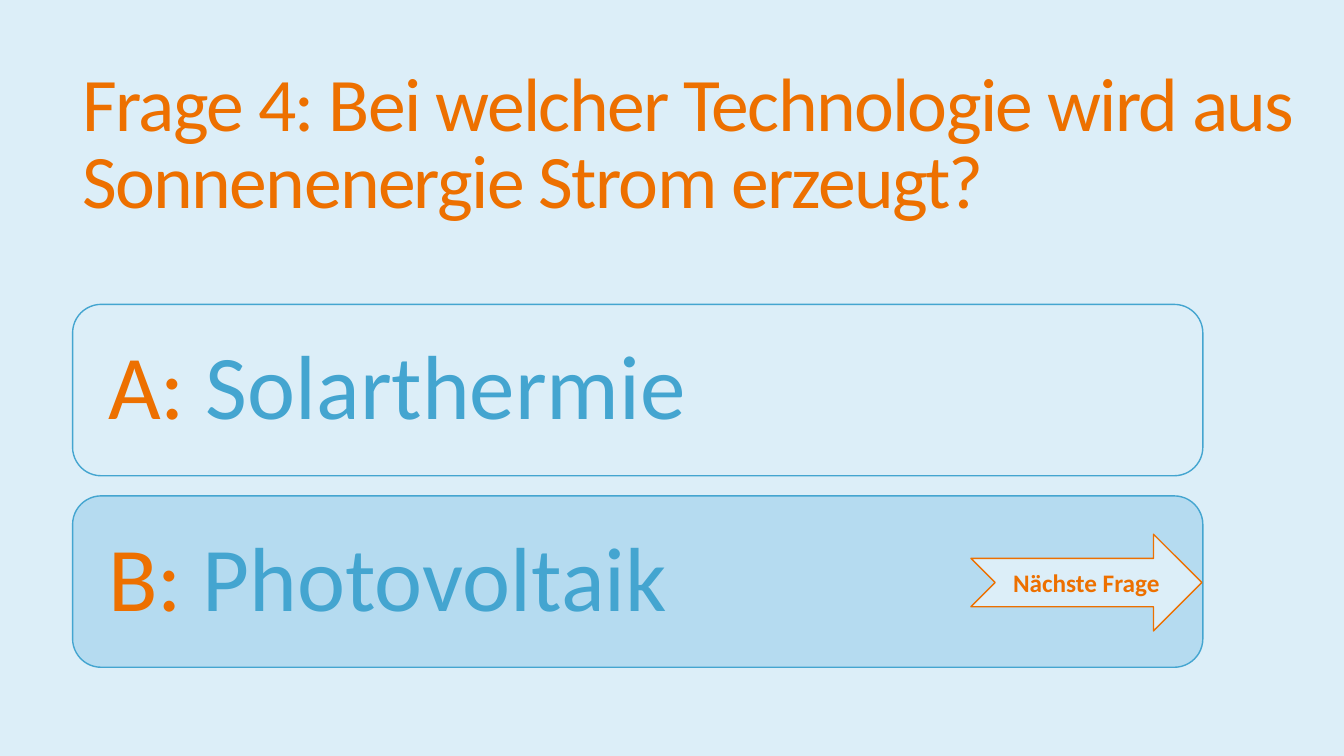
"""Build the quiz slide for question 4 about solar technologies."""
from typing import NamedTuple

from pptx import Presentation
from pptx.dml.color import RGBColor
from pptx.enum.shapes import MSO_SHAPE
from pptx.enum.text import MSO_ANCHOR, MSO_AUTO_SIZE, PP_ALIGN
from pptx.shapes.autoshape import Shape
from pptx.slide import Slide
from pptx.util import Inches, Pt

ORANGE = RGBColor(0xED, 0x70, 0x00)
BLUE = RGBColor(0x44, 0xA5, 0xD0)
PALE = RGBColor(0xDC, 0xEE, 0xF8)
HIGHLIGHT = RGBColor(0xB5, 0xDB, 0xF0)
LEFT, ANSWER_TOP, ANSWER_PITCH = 0.72, 3.02, 1.9


class Answer(NamedTuple):
    letter: str
    text: str
    fill: RGBColor


class Run(NamedTuple):
    text: str
    color: RGBColor


ANSWERS = [
    Answer("A", "Solarthermie", PALE),
    Answer("B", "Photovoltaik", HIGHLIGHT),
]


def write(box: Shape, runs: list[Run], *, size: float, align: PP_ALIGN = PP_ALIGN.LEFT,
          bold: bool = False, line_spacing: float = 1.0, tracking: float = 0,
          inset: float | None = None) -> None:
    frame = box.text_frame
    frame.word_wrap = True
    frame.auto_size = MSO_AUTO_SIZE.NONE
    frame.vertical_anchor = MSO_ANCHOR.MIDDLE
    if inset is not None:
        frame.margin_left = frame.margin_right = Inches(inset)
        frame.margin_top = frame.margin_bottom = Inches(inset)
    para = frame.paragraphs[0]
    para.alignment = align
    para.line_spacing = line_spacing
    for run in runs:
        span = para.add_run()
        span.text = run.text
        span.font.name = "Calibri"
        span.font.size = Pt(size)
        span.font.bold = bold
        span.font.color.rgb = run.color
        if tracking:
            span.font._element.set("spc", str(round(tracking * 100)))


def add_panel(page: Slide, kind: MSO_SHAPE, left: float, top: float, width: float,
              height: float, fill: RGBColor, line: RGBColor) -> Shape:
    box = page.shapes.add_shape(kind, Inches(left), Inches(top), Inches(width), Inches(height))
    box.shadow.inherit = False
    box.fill.solid()
    box.fill.fore_color.rgb = fill
    box.line.color.rgb = line
    box.line.width = Pt(1)
    return box


def add_title(page: Slide, text: str) -> None:
    title = page.shapes.title
    title.left, title.top = Inches(LEFT), Inches(0.55)
    title.width, title.height = Inches(12.45), Inches(1.81)
    write(title, [Run(text, ORANGE)], size=54, line_spacing=0.85, tracking=-1.2)


def add_answer(page: Slide, index: int, answer: Answer) -> None:
    top = ANSWER_TOP + index * ANSWER_PITCH
    box = add_panel(page, MSO_SHAPE.ROUNDED_RECTANGLE, LEFT, top, 11.21, 1.7, answer.fill, BLUE)
    runs = [Run(f"{answer.letter}: ", ORANGE), Run(answer.text, BLUE)]
    write(box, runs, size=65, line_spacing=0.9, inset=0.27)


def main() -> None:
    deck = Presentation()
    deck.slide_width, deck.slide_height = Inches(13.33), Inches(7.5)
    page = deck.slides.add_slide(deck.slide_layouts[5])
    page.background.fill.solid()
    page.background.fill.fore_color.rgb = PALE
    add_title(page, "Frage 4: Bei welcher Technologie wird aus Sonnenenergie Strom erzeugt?")
    for index, answer in enumerate(ANSWERS):
        add_answer(page, index, answer)
    arrow = add_panel(page, MSO_SHAPE.NOTCHED_RIGHT_ARROW, 9.63, 5.3, 2.29, 0.96, PALE, ORANGE)
    write(arrow, [Run("Nächste Frage", ORANGE)], size=18, align=PP_ALIGN.CENTER, bold=True)
    deck.save("out.pptx")


if __name__ == "__main__":
    main()
